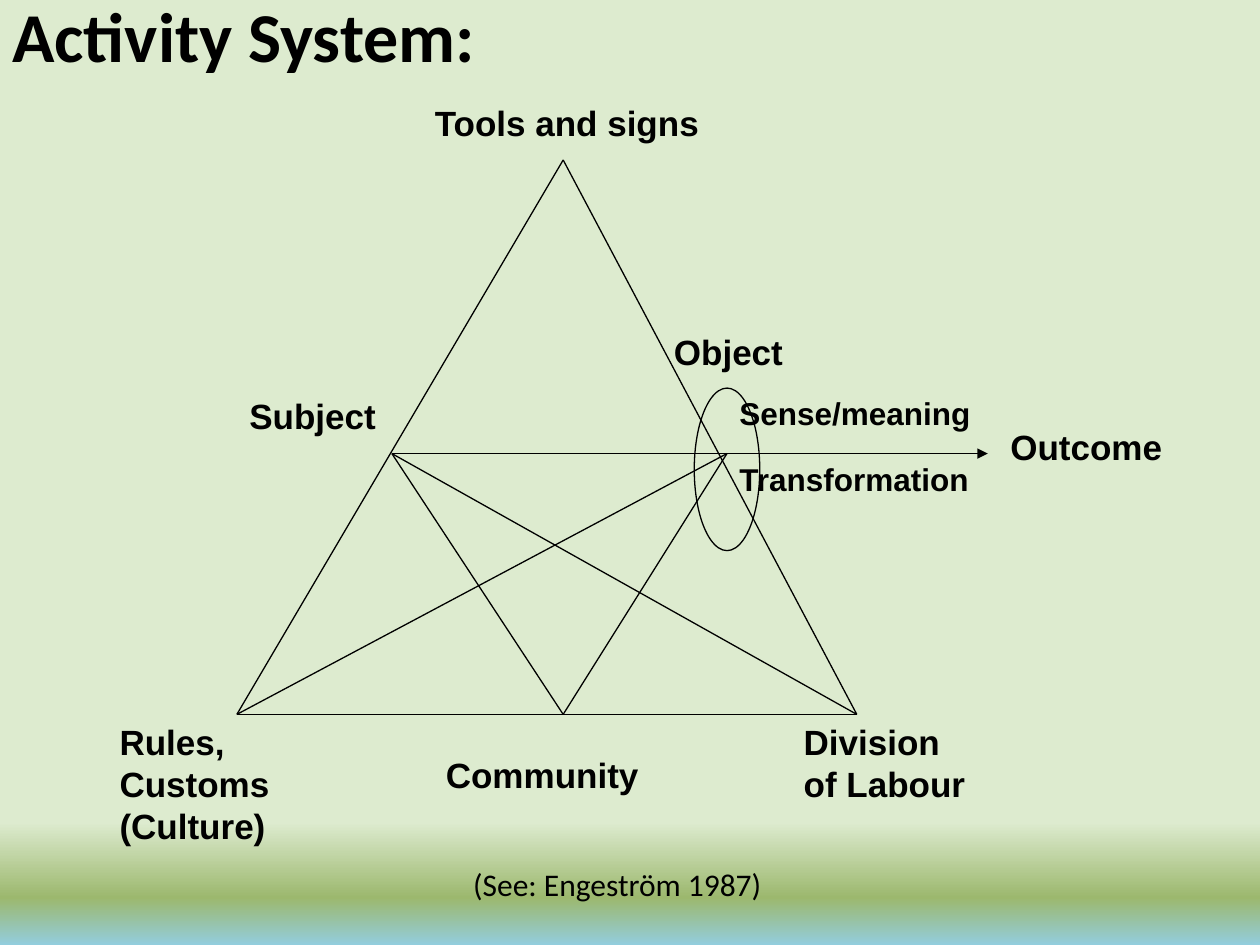
from pptx import Presentation
from pptx.dml.color import RGBColor
from pptx.enum.shapes import MSO_CONNECTOR as Link, MSO_SHAPE as Shape
from pptx.enum.text import PP_ALIGN as Align
from pptx.oxml.ns import qn
from pptx.util import Inches, Pt
from lxml.etree import SubElement

BLACK = RGBColor(0, 0, 0)
PALE = RGBColor(0xDD, 0xEB, 0xCF)
OLIVE = RGBColor(0x9C, 0xB8, 0x6E)
BLUE = RGBColor(0x93, 0xCD, 0xDD)


def paint_back(slide):
    fill = slide.background.fill
    fill.gradient()
    fill.gradient_angle = 270
    stops = next(slide.element.iter(qn("a:gsLst")))
    for stop in list(stops):
        stops.remove(stop)
    for pos, color in ((0, PALE), (87, PALE), (95, OLIVE), (100, BLUE)):
        stop = SubElement(stops, qn("a:gs"), pos=str(pos * 1000))
        SubElement(stop, qn("a:srgbClr"), val=str(color))


def add_text(slide, box, text, size, font="Arial", bold=True, align=Align.LEFT):
    frame = slide.shapes.add_textbox(*map(Inches, box)).text_frame
    frame.word_wrap = True
    frame.text = text
    for para in frame.paragraphs:
        para.alignment = align
        for run in para.runs:
            run.font.name = font
            run.font.size = Pt(size)
            run.font.bold = bold
            run.font.color.rgb = BLACK


def add_line(slide, start, end, arrow=False):
    line = slide.shapes.add_connector(Link.STRAIGHT, *map(Inches, start + end))
    line.line.color.rgb = BLACK
    line.line.width = Pt(0.75)
    props = line._element.spPr
    if arrow:
        SubElement(props.find(qn("a:ln")), qn("a:tailEnd"), type="triangle")
    SubElement(props, qn("a:effectLst"))


def add_oval(slide, box):
    oval = slide.shapes.add_shape(Shape.OVAL, *map(Inches, box))
    oval.shadow.inherit = False
    oval.fill.background()
    oval.line.color.rgb = BLACK
    oval.line.width = Pt(0.75)


def draw_system(slide, left, top):
    def at(x, y):
        return left + x, top + y

    tools = at(3.62, 0.51)
    rules = at(1.03, 4.91)
    group = at(3.62, 4.91)
    labour = at(5.95, 4.91)
    subject = at(2.26, 2.84)
    target = at(4.92, 2.84)
    result = at(6.99, 2.84)

    edges = (
        (rules, tools), (rules, labour), (tools, labour),
        (subject, target), (group, target), (group, subject),
        (rules, target), (subject, labour),
    )
    for start, end in edges:
        add_line(slide, start, end)
    add_line(slide, target, result, arrow=True)
    add_oval(slide, at(4.66, 2.32) + (0.52, 1.29))

    labels = (
        ("Tools and signs", 1.97, 0, 3.36, 0.88, 20, Align.CENTER),
        ("Outcome", 7.07, 2.57, 1.81, 0.78, 20, Align.LEFT),
        ("Subject", 1.03, 2.32, 1.55, 0.78, 20, Align.LEFT),
        ("Object", 4.4, 1.81, 1.29, 0.78, 20, Align.LEFT),
        ("Division\nof Labour", 5.43, 4.91, 1.81, 1.03, 20, Align.LEFT),
        ("Community", 2.59, 5.17, 2.07, 0.78, 20, Align.LEFT),
        ("Rules, Customs\n(Culture)", 0, 4.91, 1.81, 1.03, 20, Align.LEFT),
        ("Transformation", 4.92, 2.84, 2.59, 0.78, 18, Align.LEFT),
        ("Sense/meaning", 4.92, 2.32, 2.85, 0.78, 18, Align.LEFT),
    )
    for text, x, y, width, height, size, align in labels:
        add_text(slide, at(x, y) + (width, height), text, size, align=align)


def main():
    deck = Presentation()
    deck.slide_width, deck.slide_height = Inches(10), Inches(7.5)
    slide = deck.slides.add_slide(deck.slide_layouts[6])
    paint_back(slide)
    draw_system(slide, 0.85, 0.76)
    add_text(slide, (0, -0.11, 9.2, 0.77), "Activity System:", 40, "Calibri")
    add_text(slide, (1.2, 6.82, 7.4, 0.4), "(See: Engeström 1987)", 18,
             "Calibri", False, Align.CENTER)
    deck.save("out.pptx")


if __name__ == "__main__":
    main()
